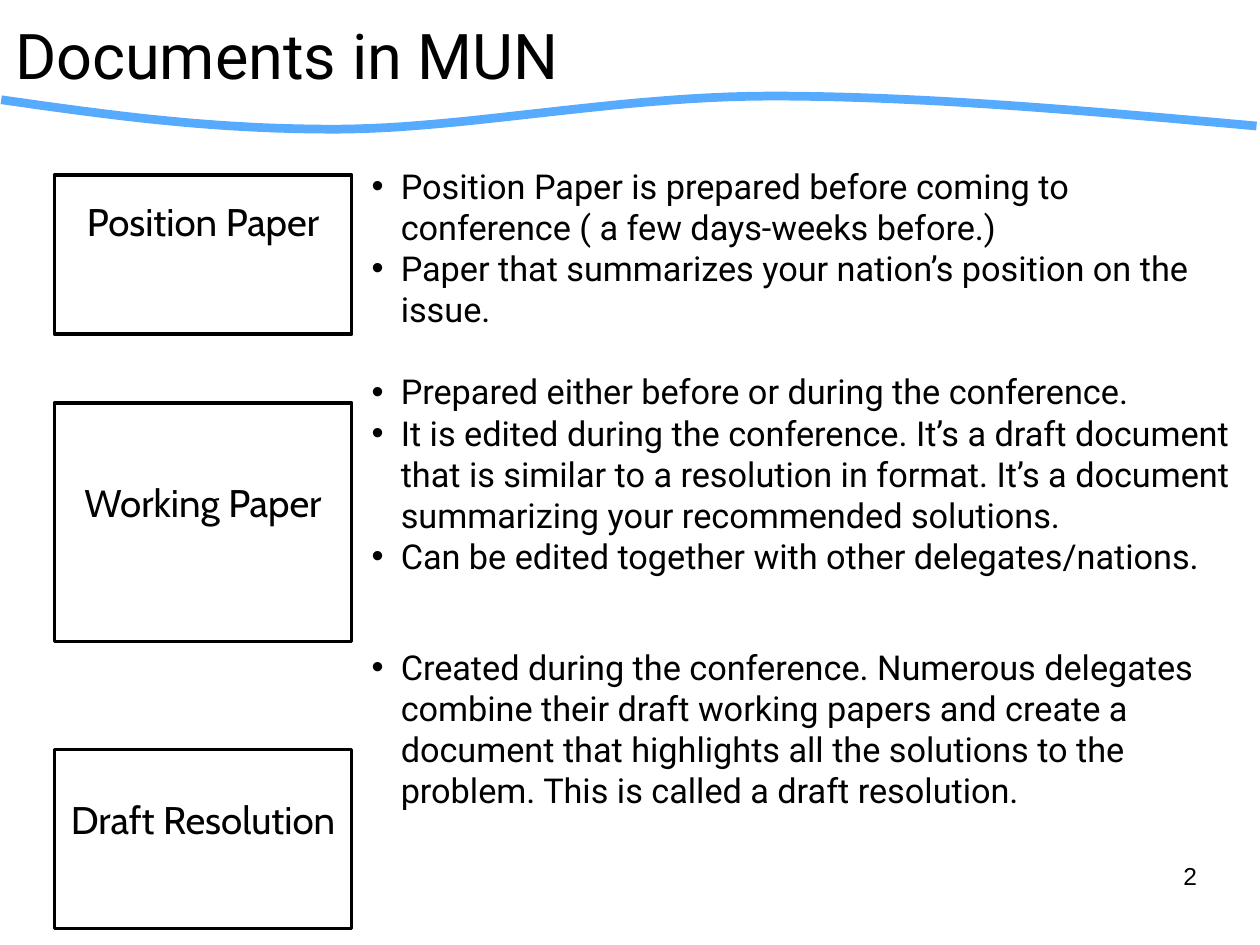
import pptx
import pptx.util
import pptx.dml.color
import pptx.enum.shapes
import pptx.enum.text
import lxml.etree

Pt = pptx.util.Pt
ALIGN = pptx.enum.text.PP_ALIGN
ANCHOR = pptx.enum.text.MSO_ANCHOR
HUES = {"ink": "000000", "wave": "57ABFF"}

START = (0.7, 57)
BENDS = [
    [(60.5, 65.5), (120, 74), (193, 73.8)],
    [(265.7, 73.5), (350.6, 55.4), (437.8, 54.9)],
    [(525.6, 54.7), (622, 63.4), (718, 72)],
]

PAPERS = [
    ("Position Paper", 100.1, 90.7, 13.3),
    ("Working Paper", 230.4, 136.1, 43.4),
    ("Draft Resolution", 428.4, 102.2, 26.5),
]

NOTES = [
    (0, ["Position Paper is prepared before coming to conference ( a few days-weeks before.)",
         "Paper that summarizes your nation’s position on the issue."]),
    (23.5, ["Prepared either before or during the conference.",
            "It is edited during the conference. It’s a draft document that is similar to a "
            "resolution in format. It’s a document summarizing your recommended solutions.",
            "Can be edited together with other delegates/nations."]),
    (40, ["Created during the conference. Numerous delegates combine their draft working "
          "papers and create a document that highlights all the solutions to the problem. "
          "This is called a draft resolution."]),
]


def tint(name):
    return pptx.dml.color.RGBColor.from_string(HUES[name])


def place(shape, left, top, width, height):
    shape.left, shape.top = Pt(left), Pt(top)
    shape.width, shape.height = Pt(width), Pt(height)


def frame(shape, anchor=ANCHOR.TOP, inset=0, top=0):
    text = shape.text_frame
    text.word_wrap = True
    text.auto_size = pptx.enum.text.MSO_AUTO_SIZE.NONE
    text.vertical_anchor = anchor
    text.margin_left = text.margin_right = text.margin_bottom = Pt(inset)
    text.margin_top = Pt(top)
    return text


def write(para, words, face, size, align=ALIGN.LEFT):
    para.text = words
    para.alignment = align
    for run in para.runs:
        run.font.name = face
        run.font.size = Pt(size)
        run.font.color.rgb = tint("ink")


def stroke(shape, name, width):
    shape.shadow.inherit = False
    shape.fill.background()
    shape.line.color.rgb = tint(name)
    shape.line.width = Pt(width)


def curve(start, bends, steps=24):
    points = [start]
    for bend in bends:
        knots = [points[-1], *bend]
        for step in range(1, steps + 1):
            t = step / steps
            parts = ((1 - t) ** 3, 3 * t * (1 - t) ** 2, 3 * t * t * (1 - t), t ** 3)
            points.append(tuple(sum(p * k[axis] for p, k in zip(parts, knots))
                                for axis in (0, 1)))
    return points


def add_wave(slide):
    points = [(Pt(x), Pt(y)) for x, y in curve(START, BENDS)]
    pen = slide.shapes.build_freeform(*points[0])
    pen.add_line_segments(points[1:], close=False)
    stroke(pen.convert_to_shape(), "wave", 5)


def add_title(slide, words):
    title = slide.shapes.title
    place(title, 8.6, 3.6, 453.6, 55.4)
    write(frame(title, ANCHOR.MIDDLE).paragraphs[0], words, "Roboto", 36)


def add_box(slide, words, top, height, inset):
    kind = pptx.enum.shapes.MSO_SHAPE.RECTANGLE
    box = slide.shapes.add_shape(kind, Pt(31), Pt(top), Pt(170), Pt(height))
    stroke(box, "ink", 2)
    text = frame(box, inset=3.6, top=inset)
    write(text.paragraphs[0], words, "Cabin", 22, ALIGN.CENTER)


def add_text(slide, left, top, width, height):
    return frame(slide.shapes.add_textbox(Pt(left), Pt(top), Pt(width), Pt(height)))


def add_dot(para):
    props = para._p.get_or_add_pPr()
    props.set("marL", str(Pt(16.6)))
    props.set("indent", str(Pt(-16.6)))
    space = pptx.oxml.ns.qn
    lxml.etree.SubElement(props, space("a:buFont")).set("typeface", "Arial")
    lxml.etree.SubElement(props, space("a:buChar")).set("char", "•")


def add_notes(slide):
    text = add_text(slide, 212.4, 94.3, 493.2, 431.3)
    para = text.paragraphs[0]
    for gap, group in NOTES:
        for rank, words in enumerate(group):
            if para.text:
                para = text.add_paragraph()
            write(para, words, "Roboto", 19.6)
            para.line_spacing = Pt(23.5)
            para.space_before = Pt(0 if rank else gap)
            add_dot(para)


def main():
    deck = pptx.Presentation()
    deck.slide_width, deck.slide_height = Pt(720), Pt(540)
    slide = deck.slides.add_slide(deck.slide_layouts[5])
    add_wave(slide)
    add_title(slide, "Documents in MUN")
    for paper in PAPERS:
        add_box(slide, *paper)
    add_notes(slide)
    page = add_text(slide, 516.2, 491.8, 167.8, 23)
    write(page.paragraphs[0], "2", "Arial", 14, ALIGN.RIGHT)
    deck.save("out.pptx")


if __name__ == "__main__":
    main()
